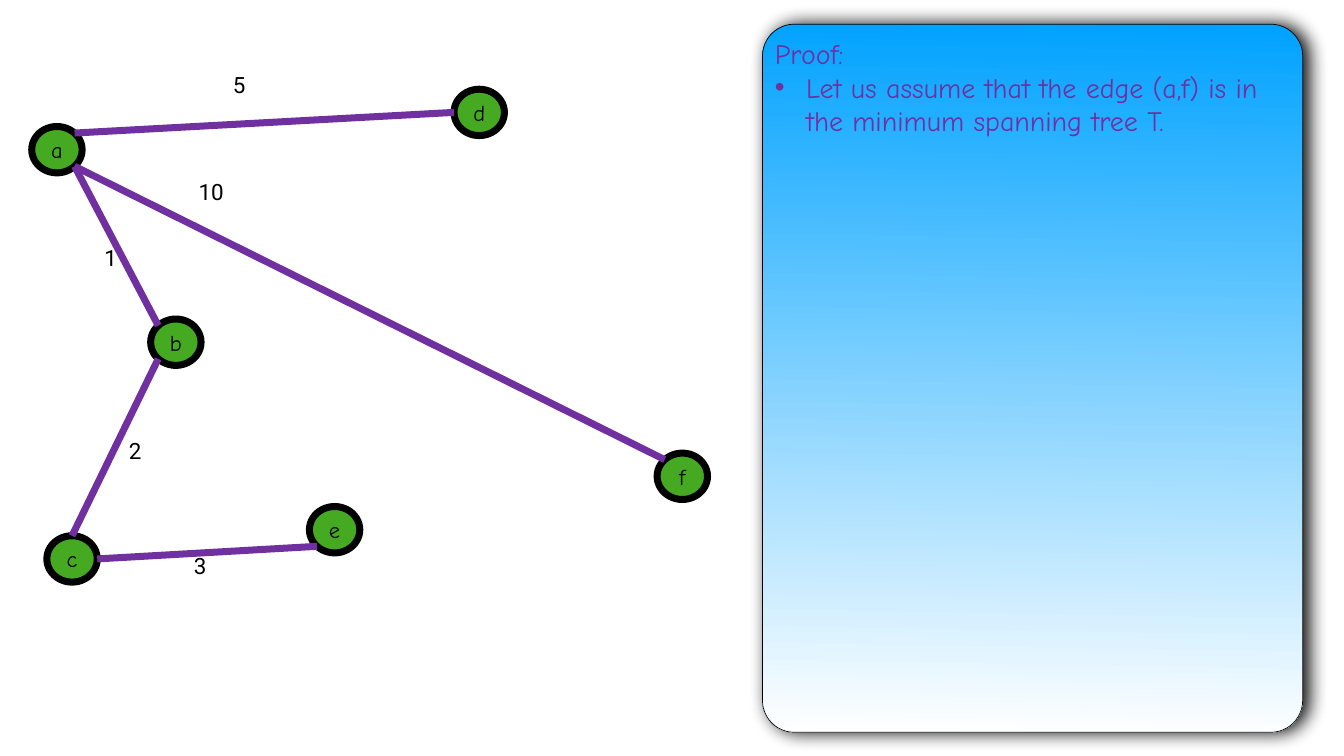
"""Build a slide that shows a weighted spanning tree beside the start of a proof."""
from dataclasses import dataclass
from math import cos, radians, sin

from lxml import etree
from pptx import Presentation
from pptx.dml.color import RGBColor
from pptx.enum.shapes import MSO_CONNECTOR, MSO_SHAPE
from pptx.enum.text import MSO_ANCHOR, MSO_AUTO_SIZE, PP_ALIGN
from pptx.oxml.ns import qn
from pptx.util import Pt

PX = 9144
STRAIGHT = MSO_CONNECTOR.STRAIGHT
OVAL, ROUNDED = MSO_SHAPE.OVAL, MSO_SHAPE.ROUNDED_RECTANGLE
TOP, MIDDLE = MSO_ANCHOR.TOP, MSO_ANCHOR.MIDDLE
LEFT, CENTER = PP_ALIGN.LEFT, PP_ALIGN.CENTER
FIT_SHAPE = MSO_AUTO_SIZE.SHAPE_TO_FIT_TEXT

HAND, PLAIN = "Comic Neue", "Roboto"
BLACK, WHITE, GREEN, PURPLE, SKY = "000000", "FFFFFF", "45AA21", "7030A0", "00A2FF"
NODE_WIDTH, NODE_HEIGHT = 100, 92
WEIGHT_HEIGHT = 123
STROKE = 10


@dataclass(frozen=True)
class Node:
    name: str
    left: int
    top: int

    def rim(self, degrees: int) -> tuple[int, int]:
        """Return the rim point at an angle measured clockwise from the right."""
        angle = radians(degrees)
        return (round(self.left + NODE_WIDTH / 2 * (1 + cos(angle))),
                round(self.top + NODE_HEIGHT / 2 * (1 + sin(angle))))


@dataclass(frozen=True)
class Edge:
    start: str
    start_angle: int
    end: str
    end_angle: int


@dataclass(frozen=True)
class Weight:
    value: str
    left: int
    top: int
    width: int = 54


NODES = {node.name: node for node in (
    Node("a", 63, 251), Node("d", 901, 177), Node("b", 299, 633),
    Node("c", 93, 1063), Node("e", 614, 1005), Node("f", 1304, 899))}
EDGES = (Edge("f", 225, "a", 45), Edge("c", 270, "b", 135), Edge("b", 225, "a", 45),
         Edge("d", 180, "a", 315), Edge("c", 0, "e", 135))
WEIGHTS = (Weight("5", 456, 110), Weight("10", 388, 321, 70), Weight("1", 201, 452),
           Weight("2", 250, 835), Weight("3", 379, 1065))


def px(*lengths: int) -> list[int]:
    """Turn lengths in px into EMU."""
    return [length * PX for length in lengths]


def color(value: str) -> RGBColor:
    """Turn a hex string into a colour."""
    return RGBColor.from_string(value)


def set_frame(frame, anchor, auto_size=None) -> None:
    """Set the margins, wrapping, anchor and growth of a text frame."""
    frame.margin_left = frame.margin_right = frame.margin_top = frame.margin_bottom = 6 * PX
    frame.word_wrap = True
    frame.vertical_anchor = anchor
    if auto_size is not None:
        frame.auto_size = auto_size


def write(paragraph, text: str, *, font: str = HAND, size: int = 32, ink: str = BLACK,
          align=LEFT, before: int = 0, spacing: float = 1.0, bullet_indent: int = 0) -> None:
    """Write formatted text into a paragraph."""
    paragraph.alignment = align
    paragraph.space_before = Pt(before)
    paragraph.line_spacing = spacing
    run = paragraph.add_run()
    run.text = text
    run.font.name, run.font.size = font, Pt(size)
    run.font.color.rgb = color(ink)
    if bullet_indent:
        properties = paragraph._p.get_or_add_pPr()
        properties.set("marL", str(bullet_indent * PX))
        properties.set("indent", str(-bullet_indent * PX))
        etree.SubElement(properties, qn("a:buFont"), typeface="Arial")
        etree.SubElement(properties, qn("a:buChar"), char="•")


def set_line(line, ink: str, width: int) -> None:
    """Set the colour and the width of a line."""
    line.color.rgb = color(ink)
    line.width = Pt(width)


def draw_node(slide, node: Node) -> None:
    """Draw a graph node with its name."""
    oval = slide.shapes.add_shape(OVAL, *px(node.left, node.top, NODE_WIDTH, NODE_HEIGHT))
    oval.shadow.inherit = False
    oval.fill.solid()
    oval.fill.fore_color.rgb = color(GREEN)
    set_line(oval.line, BLACK, STROKE)
    set_frame(oval.text_frame, MIDDLE, FIT_SHAPE)
    write(oval.text_frame.paragraphs[0], node.name, align=CENTER)


def draw_edge(slide, edge: Edge) -> None:
    """Draw a tree edge from rim to rim."""
    start = NODES[edge.start].rim(edge.start_angle)
    end = NODES[edge.end].rim(edge.end_angle)
    connector = slide.shapes.add_connector(STRAIGHT, *px(*start, *end))
    set_line(connector.line, PURPLE, STROKE)
    etree.SubElement(connector._element.spPr, qn("a:effectLst"))


def draw_weight(slide, weight: Weight) -> None:
    """Draw the weight of an edge."""
    box = slide.shapes.add_textbox(*px(weight.left, weight.top, weight.width, WEIGHT_HEIGHT))
    set_frame(box.text_frame, MIDDLE, FIT_SHAPE)
    write(box.text_frame.paragraphs[0], weight.value, font=PLAIN, before=45, spacing=0.9)


def add_shadow(shape, ink: str, alpha: int, blur: int, distance: int) -> None:
    """Give a shape a soft shadow to its right."""
    shape.shadow.inherit = False
    effects = shape._element.spPr.find(qn("a:effectLst"))
    shadow = etree.SubElement(effects, qn("a:outerShdw"), blurRad=str(Pt(blur)),
                              dist=str(Pt(distance)), dir="0", rotWithShape="0")
    tone = etree.SubElement(shadow, qn("a:srgbClr"), val=ink)
    etree.SubElement(tone, qn("a:alpha"), val=str(alpha * 1000))


def draw_proof(slide) -> None:
    """Draw the proof panel."""
    panel = slide.shapes.add_shape(ROUNDED, *px(1513, 48, 1072, 1405))
    panel.adjustments[0] = 0.059
    panel.fill.gradient()
    panel.fill.gradient_angle = 269
    for stop, position, tint in zip(panel.fill.gradient_stops, (0, 1), (SKY, WHITE)):
        stop.position = position
        stop.color.rgb = color(tint)
    set_line(panel.line, BLACK, 1)
    add_shadow(panel, BLACK, alpha=97, blur=28, distance=9)
    frame = panel.text_frame
    set_frame(frame, TOP)
    write(frame.paragraphs[0], "Proof:", size=40, ink=PURPLE)
    write(frame.add_paragraph(),
          "Let us assume that the edge (a,f) is in the minimum spanning tree T.",
          size=40, ink=PURPLE, bullet_indent=62)


def main() -> None:
    """Build and save the slide."""
    deck = Presentation()
    deck.slide_width, deck.slide_height = px(2667, 1500)
    slide = deck.slides.add_slide(deck.slide_layouts[6])
    for node in NODES.values():
        draw_node(slide, node)
    for edge in EDGES:
        draw_edge(slide, edge)
    for weight in WEIGHTS:
        draw_weight(slide, weight)
    draw_proof(slide)
    deck.save("out.pptx")


if __name__ == "__main__":
    main()
